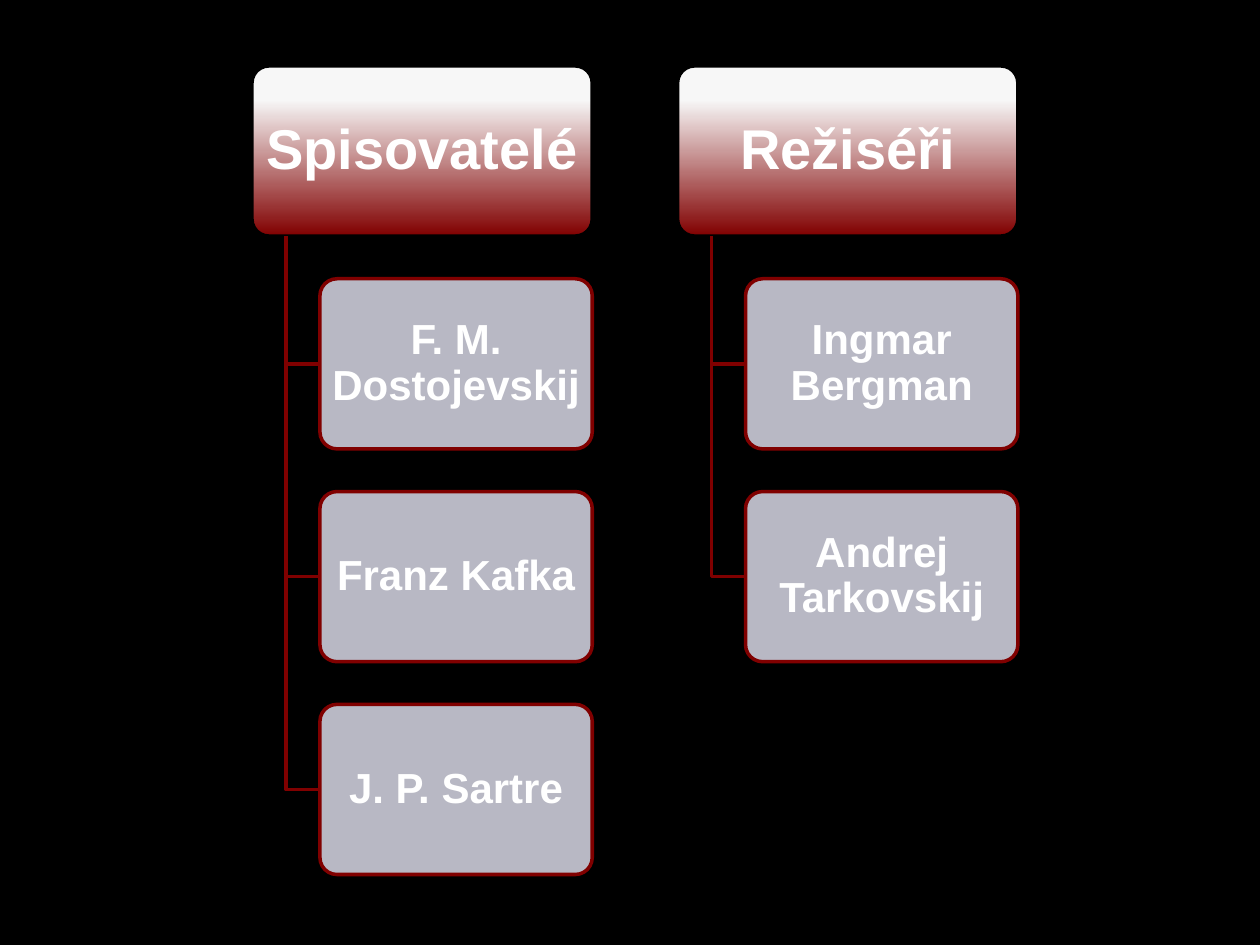
import copy

import lxml.etree
import pptx
import pptx.dml.color
import pptx.enum.shapes
import pptx.enum.text
import pptx.oxml.ns
import pptx.util

Cm = pptx.util.Cm
RGBColor = pptx.dml.color.RGBColor

BLACK = RGBColor(0x00, 0x00, 0x00)
WHITE = RGBColor(0xFF, 0xFF, 0xFF)
DARK_RED = RGBColor(0x80, 0x00, 0x00)
LAVENDER = RGBColor(0xCD, 0xCD, 0xDA)
HEADING_STOPS = [
    (0, DARK_RED),
    (0.8, RGBColor(0xF7, 0xF7, 0xF7)),
    (1, RGBColor(0xF8, 0xF8, 0xF8)),
]

BRANCHES = {
    "Spisovatelé": ["F. M. Dostojevskij", "Franz Kafka", "J. P. Sartre"],
    "Režiséři": ["Ingmar Bergman", "Andrej Tarkovskij"],
}
LEFT, TOP = Cm(5.08), Cm(1.33)
HEADING_WIDTH, NAME_WIDTH, HEIGHT = Cm(6.86), Cm(5.49), Cm(3.43)
COLUMN_STEP, ROW_STEP = Cm(8.58), Cm(4.29)
INDENT = HEADING_WIDTH - NAME_WIDTH
STEM_OFFSET = INDENT // 2


def write_text(shape, text, size, margin, color=WHITE, font="Arial"):
    frame = shape.text_frame
    frame.word_wrap = True
    frame.vertical_anchor = pptx.enum.text.MSO_ANCHOR.MIDDLE
    frame.margin_left = frame.margin_right = margin
    frame.margin_top = frame.margin_bottom = margin
    paragraph = frame.paragraphs[0]
    paragraph.alignment = pptx.enum.text.PP_ALIGN.CENTER
    paragraph.line_spacing = 0.9
    run = paragraph.add_run()
    run.text = text
    run.font.name = font
    run.font.size = pptx.util.Pt(size)
    run.font.bold = True
    run.font.color.rgb = color


def style_line(shape, color):
    shape.shadow.inherit = False
    shape.line.color.rgb = color
    shape.line.width = pptx.util.Pt(2)


def add_box(slide, left, top, width, line_color):
    box = slide.shapes.add_shape(
        pptx.enum.shapes.MSO_SHAPE.ROUNDED_RECTANGLE, left, top, width, HEIGHT
    )
    box.adjustments[0] = 0.1
    style_line(box, line_color)
    return box


def add_heading(slide, text, left):
    heading = add_box(slide, left, TOP, HEADING_WIDTH, BLACK)
    heading.fill.gradient()
    heading.fill.gradient_angle = 90
    stop_list = heading._element.spPr.find(".//" + pptx.oxml.ns.qn("a:gsLst"))
    stop_list.append(copy.deepcopy(stop_list[-1]))
    for stop, (position, color) in zip(heading.fill.gradient_stops, HEADING_STOPS):
        stop.position = position
        stop.color.rgb = color
    write_text(heading, text, size=32, margin=Cm(0.08))


def add_name(slide, text, left, top):
    name = add_box(slide, left, top, NAME_WIDTH, DARK_RED)
    name.fill.solid()
    name.fill.fore_color.rgb = LAVENDER
    color = name._element.spPr.find(".//" + pptx.oxml.ns.qn("a:srgbClr"))
    lxml.etree.SubElement(color, pptx.oxml.ns.qn("a:alpha"), val="90000")
    write_text(name, text, size=24, margin=Cm(0.03))


def add_elbow(slide, left, bottom):
    stem = left + STEM_OFFSET
    builder = slide.shapes.build_freeform(stem, TOP + HEIGHT)
    builder.add_line_segments([(stem, bottom), (left + INDENT, bottom)], close=False)
    elbow = builder.convert_to_shape()
    elbow.fill.background()
    style_line(elbow, DARK_RED)


def add_branch(slide, heading, names, left):
    add_heading(slide, heading, left)
    for row, name in enumerate(names, start=1):
        top = TOP + row * ROW_STEP
        add_elbow(slide, left, top + HEIGHT // 2)
        add_name(slide, name, left + INDENT, top)


def main():
    """Build the slide of writers and directors as two hierarchy branches."""
    deck = pptx.Presentation()
    deck.slide_width, deck.slide_height = Cm(25.4), Cm(19.05)
    slide = deck.slides.add_slide(deck.slide_layouts[6])
    slide.background.fill.solid()
    slide.background.fill.fore_color.rgb = BLACK
    for column, (heading, names) in enumerate(BRANCHES.items()):
        add_branch(slide, heading, names, LEFT + column * COLUMN_STEP)
    deck.save("out.pptx")


if __name__ == "__main__":
    main()
